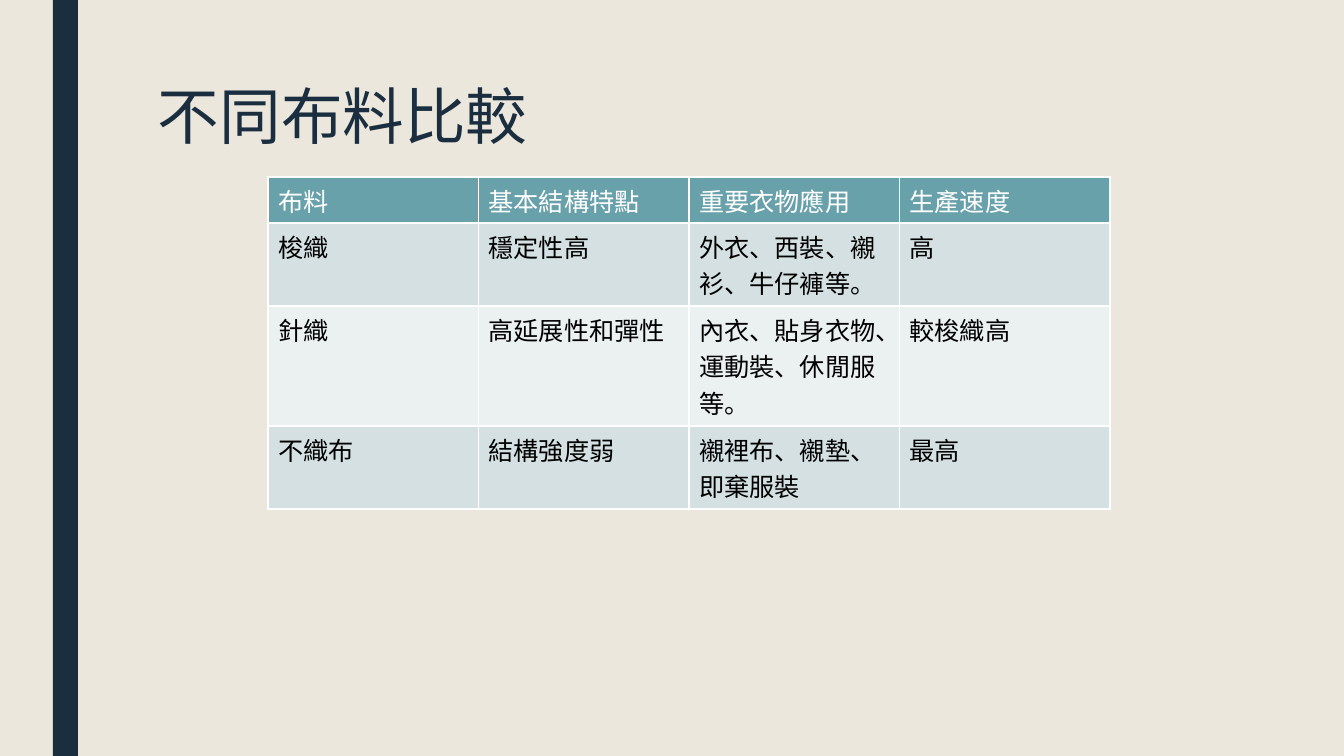
"""Build a slide comparing woven, knitted and non-woven fabrics."""
from dataclasses import dataclass

from lxml import etree
from pptx import Presentation
from pptx import util as u
from pptx.dml.color import RGBColor
from pptx.enum import shapes, text
from pptx.oxml import ns


@dataclass(frozen=True)
class Theme:
    font: str = "Karla"
    paper: str = "EBE7DD"
    navy: str = "1A2E40"
    teal: str = "69A1AB"
    bands: tuple = ("D4E0E2", "EBF0F1")
    white: str = "FFFFFF"
    black: str = "000000"
    title_size: int = 44
    body_size: int = 18
    border: int = 1


def px(count):
    return u.Emu(round(count * 914400 / 100.8))


class FabricSlide:
    def __init__(self, deck, theme):
        self.theme = theme
        self.page = deck.slides.add_slide(deck.slide_layouts[6])
        self.fill(self.page.background, theme.paper)

    def fill(self, item, color):
        item.fill.solid()
        item.fill.fore_color.rgb = RGBColor.from_string(color)

    def add_words(self, para, words, size, color):
        span = para.add_run()
        span.text = words
        formats = {"name": self.theme.font, "size": u.Pt(size), "bold": False}
        for name, value in formats.items():
            setattr(span.font, name, value)
        span.font.color.rgb = RGBColor.from_string(color)

    def bar(self, left, top, width, height, color):
        box = self.page.shapes.add_shape(
            shapes.MSO_SHAPE.RECTANGLE, *map(px, (left, top, width, height)))
        box.shadow.inherit = False
        self.fill(box, color)
        box.line.fill.background()

    def title(self, words, left, top, width, height):
        box = self.page.shapes.add_textbox(*map(px, (left, top, width, height)))
        formats = {"word_wrap": True, "margin_bottom": px(22),
                   "vertical_anchor": text.MSO_ANCHOR.BOTTOM}
        for name, value in formats.items():
            setattr(box.text_frame, name, value)
        para = box.text_frame.paragraphs[0]
        para.line_spacing = 0.89
        self.add_words(para, words, self.theme.title_size, self.theme.navy)

    def outline(self, cell):
        properties = cell._tc.get_or_add_tcPr()
        for position, side in enumerate(("lnL", "lnR", "lnT", "lnB")):
            line = etree.Element(ns.qn(f"a:{side}"), w=str(u.Pt(self.theme.border)))
            paint = etree.SubElement(line, ns.qn("a:solidFill"))
            etree.SubElement(paint, ns.qn("a:srgbClr"), val=self.theme.white)
            properties.insert(position, line)

    def table(self, rows, left, top, width, heights):
        theme = self.theme
        frame = self.page.shapes.add_table(
            len(rows), len(rows[0]), *map(px, (left, top, width, sum(heights))))
        grid = frame.table
        for row, (values, height) in enumerate(zip(rows, heights)):
            grid.rows[row].height = px(height)
            ground = theme.bands[(row - 1) % 2] if row else theme.teal
            color = theme.black if row else theme.white
            for column, words in enumerate(values):
                cell = grid.cell(row, column)
                self.fill(cell, ground)
                self.outline(cell)
                self.add_words(cell.text_frame.paragraphs[0], words, theme.body_size, color)


ROWS = (
    ("布料", "基本結構特點", "重要衣物應用", "生產速度"),
    ("梭織", "穩定性高", "外衣、西裝、襯衫、牛仔褲等。", "高"),
    ("針織", "高延展性和彈性", "內衣、貼身衣物、運動裝、休閒服等。", "較梭織高"),
    ("不織布", "結構強度弱", "襯裡布、襯墊、即棄服裝", "最高"),
)


def main():
    deck = Presentation()
    deck.slide_width, deck.slide_height = px(1344), px(756)
    theme = Theme()
    slide = FabricSlide(deck, theme)
    slide.bar(53, 0, 25, 756, theme.navy)
    slide.title("不同布料比較", 148, 12, 1058, 163)
    slide.table(ROWS, 268, 177, 842, (46, 83, 120, 83))
    deck.save("out.pptx")


if __name__ == "__main__":
    main()
